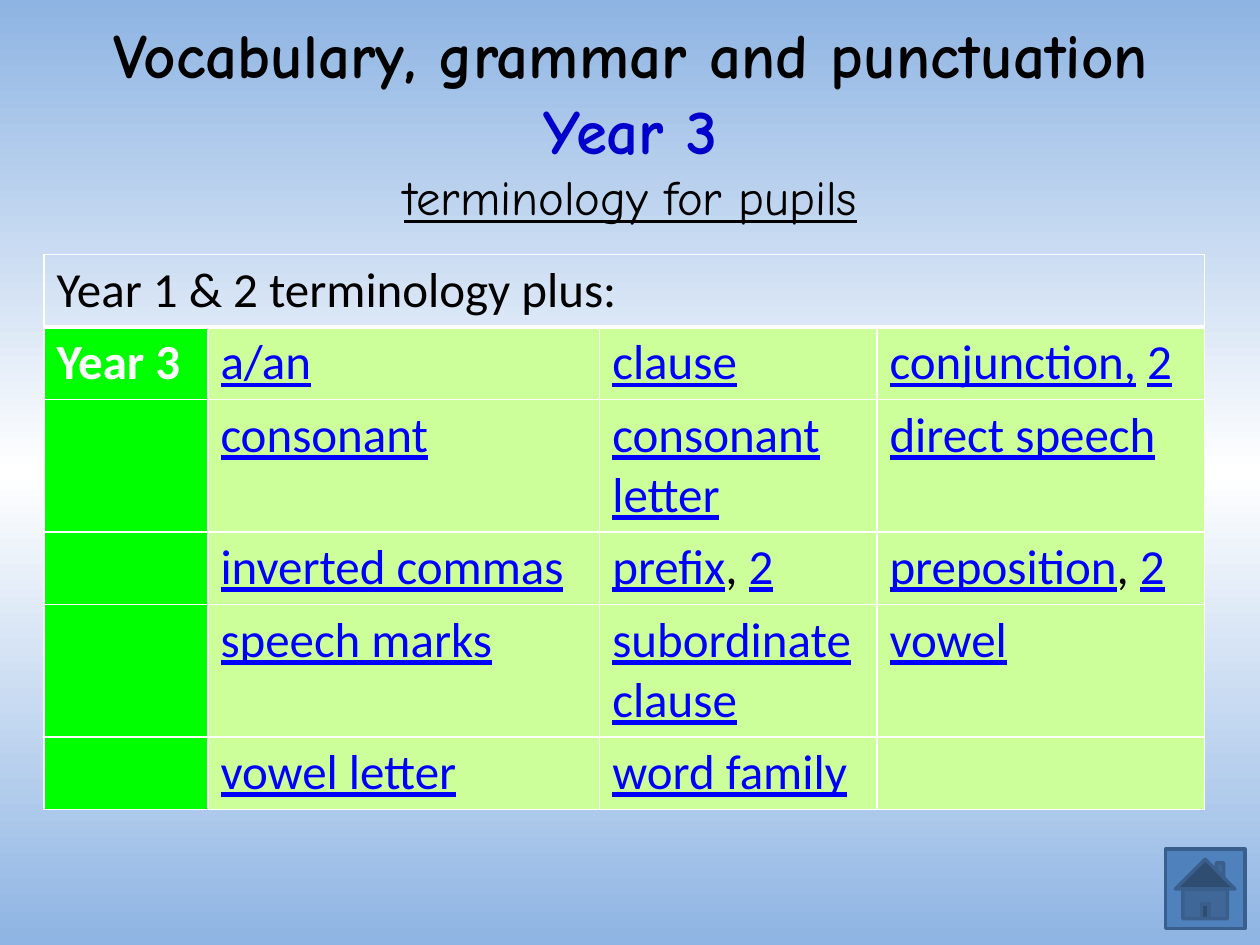
from copy import deepcopy
from lxml import etree
from pptx import Presentation
from pptx import util as u
from pptx.dml.color import RGBColor
from pptx.enum import shapes, text
from pptx.oxml.ns import qn

BLACK = RGBColor(0, 0, 0)
WHITE = RGBColor(255, 255, 255)
NAVY = RGBColor(0, 0, 0xCC)
BLUE = RGBColor(0, 0, 255)
SKY = RGBColor(0x8E, 0xB4, 0xE3)
GREEN = RGBColor(0, 255, 0)
LIME = RGBColor(0xCC, 0xFF, 0x99)
STEEL = RGBColor(0x4F, 0x81, 0xBD)
EDGE = RGBColor(0x3A, 0x5F, 0x8C)

HEAD = "Year 1 & 2 terminology plus:"
YEAR = "Year 3"
TERMS = [
    [["a/an"], ["clause"], ["conjunction,", " ", "2"]],
    [["consonant"], ["consonant letter"], ["direct speech"]],
    [["inverted commas"], ["prefix", ", ", "2"], ["preposition", ", ", "2"]],
    [["speech marks"], ["subordinate clause"], ["vowel"]],
    [["vowel letter"], ["word family"], []],
]
COLS = [1.3, 3.11, 2.2, 2.6]
ONE, TWO = 0.57, 1.05
ROWS = [ONE, ONE, TWO, ONE, TWO, ONE]


def box(*nums):
    return [u.Inches(n) for n in nums]


def add(para, words, size, face, color, bold=False, line=False):
    run = para.add_run()
    run.text = words
    font = run.font
    font.size, font.name = u.Pt(size), face
    font.bold, font.underline = bold, line
    font.color.rgb = color


def edge(cell, low=1):
    props = cell._tc.get_or_add_tcPr()
    for side, width in zip("LRTB", (1, 1, 1, low)):
        ln = etree.SubElement(props, qn("a:ln" + side), w=str(u.Pt(width)))
        fill = etree.SubElement(ln, qn("a:solidFill"))
        etree.SubElement(fill, qn("a:srgbClr"), val=str(WHITE))


def paint(cell, color):
    cell.fill.solid()
    cell.fill.fore_color.rgb = color


deck = Presentation()
deck.slide_width, deck.slide_height = box(10, 7.5)
slide = deck.slides.add_slide(deck.slide_layouts[5])

back = slide.background.fill
back.gradient()
back.gradient_angle = 90
stops = slide._element.find(".//" + qn("a:gsLst"))
stops.append(deepcopy(stops[0]))
for stop, spot, color in zip(back.gradient_stops, (0, 0.5, 1), (SKY, WHITE, SKY)):
    stop.position = spot
    stop.color.rgb = color

home = slide.shapes.add_shape(shapes.MSO_SHAPE.ACTION_BUTTON_HOME, *box(9.25, 6.74, 0.63, 0.63))
home.shadow.inherit = False
home.fill.solid()
home.fill.fore_color.rgb = STEEL
home.line.color.rgb = EDGE
home.line.width = u.Pt(2)

title = slide.shapes.title
title.left, title.top, title.width, title.height = box(0.28, 0.13, 9.45, 1.65)
frame = title.text_frame
frame.auto_size = text.MSO_AUTO_SIZE.NONE
frame.vertical_anchor = text.MSO_ANCHOR.MIDDLE
para = frame.paragraphs[0]
para.alignment = text.PP_ALIGN.CENTER
add(para, "Vocabulary, grammar and punctuation ", 36, "Comic Neue", BLACK, True)
add(para, YEAR, 36, "Comic Neue", NAVY, True)
para.add_line_break()
add(para, "terminology for pupils", 27.9, "Comic Neue", BLACK, line=True)

grid = slide.shapes.add_table(len(ROWS), len(COLS), *box(0.35, 2.02, sum(COLS), sum(ROWS))).table
grid.first_row = grid.horz_banding = False
for col, width in zip(grid.columns, COLS):
    col.width = u.Inches(width)
for row, height in zip(grid.rows, ROWS):
    row.height = u.Inches(height)

for c in range(len(COLS)):
    edge(grid.cell(0, c), 3)
    grid.cell(0, c).fill.background()
top = grid.cell(0, 0)
top.merge(grid.cell(0, len(COLS) - 1))
add(top.text_frame.paragraphs[0], HEAD, 28, "Calibri", BLACK)

for r, terms in enumerate(TERMS, 1):
    side = grid.cell(r, 0)
    edge(side)
    paint(side, GREEN)
    for c, parts in enumerate(terms, 1):
        cell = grid.cell(r, c)
        edge(cell)
        paint(cell, LIME)
        for part in parts:
            link = part.strip(", ") != ""
            add(cell.text_frame.paragraphs[0], part, 28, "Calibri", BLUE if link else BLACK, line=link)
add(grid.cell(1, 0).text_frame.paragraphs[0], YEAR, 28, "Calibri", WHITE, True)

deck.save("out.pptx")
